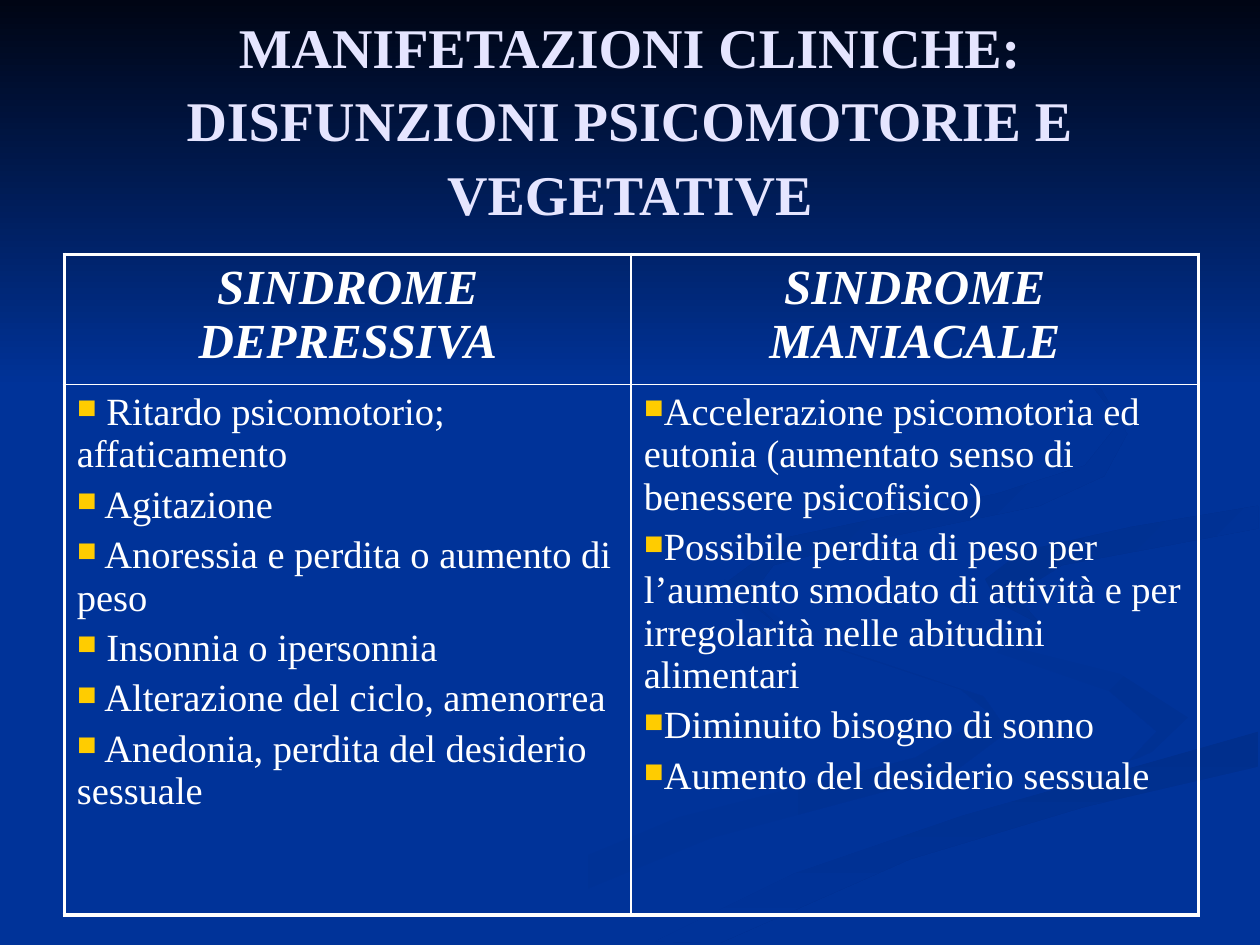
"""Build a slide that contrasts depressive and manic syndromes in a two-column table."""

from dataclasses import dataclass
from typing import Any, Optional

from lxml.etree import SubElement
from pptx import Presentation
from pptx.dml.color import RGBColor as Rgb
from pptx.enum.shapes import MSO_SHAPE as Preset
from pptx.enum.text import MSO_ANCHOR as Anchor, PP_ALIGN as Align
from pptx.oxml.ns import qn
from pptx.util import Pt


@dataclass(frozen=True)
class Theme:
    font: str = "Times New Roman"
    ground: str = "003399"
    night: str = "000514"
    shade: str = "002F8D"
    haze: str = "003193"
    title: str = "E5E5FF"
    text: str = "FFFFFF"
    bullet: str = "FFCC00"
    title_size: float = 32
    header_size: float = 28
    body_size: float = 22
    outer_line: float = 2.25
    inner_line: float = 1


@dataclass(frozen=True)
class Fade:
    start: str
    end: str
    angle: int


@dataclass(frozen=True)
class Ribbon:
    fade: Optional[Fade]
    points: list[tuple[float, float]]


@dataclass(frozen=True)
class Column:
    header: str
    items: list[str]


THEME = Theme()

BEND = [(522, 334), (536, 353), (584, 371), (640, 385), (679, 410)]
LOWER_EDGE = [(374, 538), (454, 499), (550, 466), (719, 418)]
UPPER_EDGE = [(719, 289), (647, 301), (584, 315), (563, 331)]

RIBBONS = [
    Ribbon(Fade(THEME.ground, THEME.haze, 0), [
        (562, 398), (462, 365), (414, 331), (427, 354), (549, 394), (566, 408),
        (523, 433), (388, 467), (216, 539), (260, 539), (406, 479), (544, 442), (576, 418)]),
    Ribbon(Fade(THEME.ground, THEME.haze, 45), [
        *reversed(BEND), (544, 364), (634, 395), (661, 418), (644, 436), (675, 422)]),
    Ribbon(Fade(THEME.shade, THEME.ground, 90), [
        *LOWER_EDGE, (719, 438), (620, 461), (520, 491), (411, 539)]),
    Ribbon(None, [
        *BEND, (656, 432), (535, 463), (413, 506), (343, 539), *LOWER_EDGE, (719, 387),
        (611, 362), (572, 346), *reversed(UPPER_EDGE), (719, 279), (582, 300), (534, 316)]),
    Ribbon(Fade(THEME.shade, THEME.ground, 45), [
        *UPPER_EDGE, (570, 344), (595, 357), (580, 340), (607, 323), (719, 302)]),
    Ribbon(Fade(THEME.shade, THEME.ground, 45), [
        (492, 310), (594, 289), (631, 272), (644, 248), (622, 210), (549, 168), (609, 201),
        (640, 241), (620, 266), (570, 282), (450, 307), (415, 333), (448, 360), (428, 342),
        (442, 323)]),
]

COLUMNS = [
    Column("SINDROME DEPRESSIVA", [
        " Ritardo psicomotorio; affaticamento",
        " Agitazione",
        " Anoressia e perdita o aumento di peso",
        " Insonnia o ipersonnia",
        " Alterazione del ciclo, amenorrea",
        " Anedonia, perdita del desiderio sessuale"]),
    Column("SINDROME MANIACALE", [
        "Accelerazione psicomotoria ed eutonia (aumentato senso di benessere psicofisico)",
        "Possibile perdita di peso per l’aumento smodato di attività e per irregolarità "
        "nelle abitudini alimentari",
        "Diminuito bisogno di sonno",
        "Aumento del desiderio sessuale"]),
]


def apply(target: Any, values: dict[str, Any]) -> None:
    """Set each named attribute on the target."""
    for name, value in values.items():
        setattr(target, name, value)


def paint(shape: Any, fade: Optional[Fade]) -> None:
    """Fill a borderless shape with a fade, or with the ground colour."""
    shape.shadow.inherit = False
    shape.line.fill.background()
    if fade is None:
        shape.fill.solid()
        shape.fill.fore_color.rgb = Rgb.from_string(THEME.ground)
        return
    shape.fill.gradient()
    shape.fill.gradient_angle = -fade.angle % 360
    for stop, color in zip(shape.fill.gradient_stops, (fade.start, fade.end)):
        stop.color.rgb = Rgb.from_string(color)


def draw_ribbon(page: Any, ribbon: Ribbon) -> None:
    """Draw one closed background ribbon."""
    builder = page.shapes.build_freeform(*ribbon.points[0], scale=Pt(1))
    builder.add_line_segments(ribbon.points[1:], close=True)
    paint(builder.convert_to_shape(), ribbon.fade)


def write(para: Any, text: str, size: float, color: str, **style: bool) -> None:
    """Write one formatted span into a paragraph."""
    span = para.add_run()
    span.text = text
    apply(span.font, {"name": THEME.font, "size": Pt(size), **style})
    span.font.color.rgb = Rgb.from_string(color)


def add_bullet(para: Any) -> None:
    """Give a paragraph a small square bullet without indent."""
    props = para._p.get_or_add_pPr()
    for name in ("marL", "indent"):
        props.set(name, "0")
    SubElement(SubElement(props, qn("a:buClr")), qn("a:srgbClr"), val=THEME.bullet)
    SubElement(props, qn("a:buSzPct"), val="70000")
    SubElement(props, qn("a:buChar"), char="■")


def style_cell(cell: Any, row: int, column: int) -> None:
    """Draw thick outer and thin inner borders around a clear cell."""
    outer = {"lnL": column == 0, "lnR": column == len(COLUMNS) - 1,
             "lnT": row == 0, "lnB": row == 1}
    props = cell._tc.get_or_add_tcPr()
    for side, is_outer in outer.items():
        width = Pt(THEME.outer_line if is_outer else THEME.inner_line)
        line = SubElement(props, qn(f"a:{side}"), w=str(int(width)))
        SubElement(SubElement(line, qn("a:solidFill")), qn("a:srgbClr"), val=THEME.text)
    cell.fill.background()


def draw_title(page: Any) -> None:
    """Draw the centred slide title."""
    frame = page.shapes.add_textbox(Pt(36), Pt(21.6), Pt(648), Pt(90)).text_frame
    apply(frame, {"word_wrap": True, "vertical_anchor": Anchor.MIDDLE})
    para = frame.paragraphs[0]
    apply(para, {"alignment": Align.CENTER, "line_spacing": 1.09})
    write(para, "MANIFETAZIONI CLINICHE: DISFUNZIONI PSICOMOTORIE E VEGETATIVE",
          THEME.title_size, THEME.title, bold=True)


def draw_table(page: Any) -> None:
    """Draw the table that compares the two syndromes."""
    table = page.shapes.add_table(
        2, len(COLUMNS), Pt(36.7), Pt(145.4), Pt(648), Pt(377.3)).table
    apply(table, {"first_row": False, "horz_banding": False})
    for row, height in zip(table.rows, (74.2, 303.1)):
        row.height = Pt(height)
    for index, column in enumerate(COLUMNS):
        header, body = (table.cell(row, index) for row in range(2))
        for row, cell in enumerate((header, body)):
            style_cell(cell, row, index)
        para = header.text_frame.paragraphs[0]
        apply(para, {"alignment": Align.CENTER, "space_before": Pt(0.2 * THEME.header_size)})
        write(para, column.header, THEME.header_size, THEME.text, bold=True, italic=True)
        frame = body.text_frame
        for order, item in enumerate(column.items):
            para = frame.add_paragraph() if order else frame.paragraphs[0]
            para.space_before = Pt(0.2 * THEME.body_size)
            add_bullet(para)
            write(para, item, THEME.body_size, THEME.text, bold=False)


def main() -> None:
    """Build and save the deck."""
    deck = Presentation()
    apply(deck, {"slide_width": Pt(720), "slide_height": Pt(540)})
    page = deck.slides.add_slide(deck.slide_layouts[6])
    page.background.fill.solid()
    page.background.fill.fore_color.rgb = Rgb.from_string(THEME.ground)
    for ribbon in RIBBONS:
        draw_ribbon(page, ribbon)
    sky = page.shapes.add_shape(Preset.RECTANGLE, Pt(0), Pt(0), Pt(720), Pt(221.8))
    paint(sky, Fade(THEME.night, THEME.ground, 90))
    draw_title(page)
    draw_table(page)
    deck.save("out.pptx")


if __name__ == "__main__":
    main()
